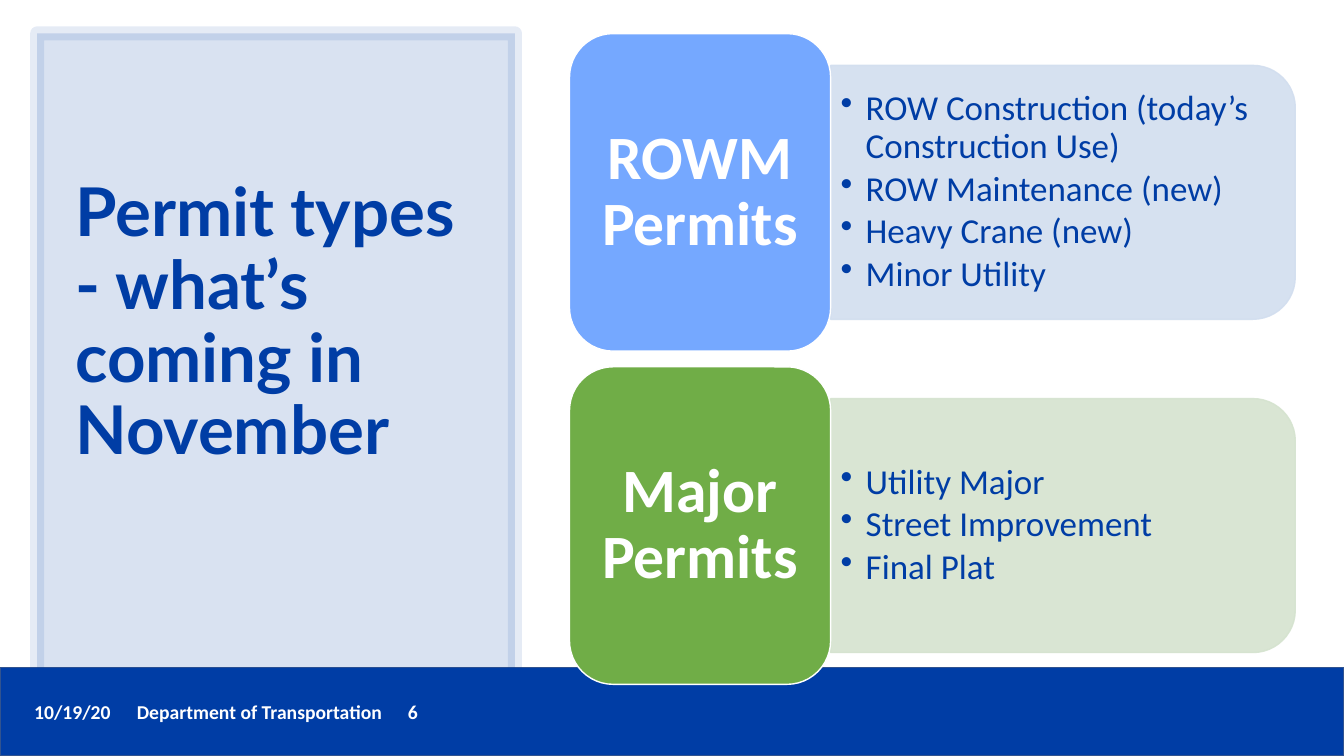
from lxml.etree import SubElement
from pptx import Presentation
from pptx.dml.color import RGBColor
from pptx.enum.shapes import MSO_SHAPE
from pptx.enum.text import MSO_ANCHOR, PP_ALIGN
from pptx.oxml.ns import qn
from pptx.util import Pt

NAVY = RGBColor(0x00, 0x3D, 0xA5)
WHITE = RGBColor(0xFF, 0xFF, 0xFF)
EDGE = RGBColor(0x31, 0x53, 0x8F)
SKY = RGBColor(0x75, 0xA8, 0xFF)
GREEN = RGBColor(0x70, 0xAD, 0x47)
PALE_SKY = RGBColor(0xD2, 0xDE, 0xEF)
PALE_GREEN = RGBColor(0xD5, 0xE3, 0xCF)

deck = Presentation()
deck.slide_width, deck.slide_height = Pt(960), Pt(540)
slide = deck.slides.add_slide(deck.slide_layouts[6])


def draw(kind, x, y, w, h, fill, line, width=1, clear=(100, 100)):
    """Add a shape; clear holds the opacity of fill and line in percent."""
    shape = slide.shapes.add_shape(kind, Pt(x), Pt(y), Pt(w), Pt(h))
    shape.shadow.inherit = False
    shape.line.width = Pt(width)
    for part, color, alpha in zip((shape.fill, shape.line.fill), (fill, line), clear):
        part.solid()
        part.fore_color.rgb = color
        if alpha < 100:
            node = part._xPr.find(qn("a:solidFill"))[0]
            SubElement(node, qn("a:alpha"), val=str(alpha * 1000))
    return shape


def write(text, box=None, shape=None, size=25, font="Calibri", color=NAVY, bold=False,
          align=PP_ALIGN.LEFT, inset=(7.2, 3.6), lead=0.9, after=0, bullet=False, tabs=()):
    """Fill a shape, or a new text box, with one paragraph per line of text."""
    if shape is None:
        shape = slide.shapes.add_textbox(*map(Pt, box))
    frame = shape.text_frame
    frame.word_wrap = True
    frame.vertical_anchor = MSO_ANCHOR.MIDDLE
    frame.margin_left = frame.margin_right = Pt(inset[0])
    frame.margin_top = frame.margin_bottom = Pt(inset[1])
    for i, line in enumerate(text.split("\n")):
        para = frame.add_paragraph() if i else frame.paragraphs[0]
        para.alignment, para.line_spacing = align, lead
        para.space_after = Pt(after)
        props = para._p.get_or_add_pPr()
        if bullet:
            props.set("marL", str(Pt(18)))
            props.set("indent", str(-Pt(18)))
            SubElement(props, qn("a:buChar"), char="•")
        if tabs:
            stops = SubElement(props, qn("a:tabLst"))
            for stop in tabs:
                SubElement(stops, qn("a:tab"), pos=str(Pt(stop)), algn="l")
        run = para.add_run()
        run.text = line
        run.font.name, run.font.size = font, Pt(size)
        run.font.bold, run.font.color.rgb = bold, color


# Footer
draw(MSO_SHAPE.RECTANGLE, 0, 476.6, 960, 63.4, NAVY, EDGE)
write("10/19/20\tDepartment of Transportation\t6", box=(17.3, 496.1, 724, 24.5),
      size=14, color=WHITE, bold=True, lead=1, tabs=(73.4, 267))

# Title panel
draw(MSO_SHAPE.RECTANGLE, 26.6, 23.8, 341.3, 464.4, NAVY, NAVY, 10, (15, 10))
write("Permit types - what’s coming in November", box=(46.8, 50.4, 299.5, 362),
      size=48, font="Lato", bold=True)

# Permit groups: tile on the left, list panel on the right
GROUPS = [
    ("ROWM Permits", SKY, PALE_SKY,
     "ROW Construction (today’s Construction Use)\nROW Maintenance (new)\n"
     "Heavy Crane (new)\nMinor Utility"),
    ("Major Permits", GREEN, PALE_GREEN,
     "Utility Major\nStreet Improvement\nFinal Plat"),
]
LEFT, TOP, STEP = 406.8, 24, 238
TILE_W, TILE_H = 186.5, 226.8
LIST_W, LIST_H = 331.9, 181.4

for i, (name, dark, pale, items) in enumerate(GROUPS):
    top = TOP + i * STEP
    mid = top + TILE_H / 2
    edge = LEFT + TILE_W
    # The panel is turned a quarter, so its width and height trade places
    panel = draw(MSO_SHAPE.ROUND_2_SAME_RECTANGLE, edge + (LIST_W - LIST_H) / 2,
                 mid - LIST_W / 2, LIST_H, LIST_W, pale, pale, 1, (90, 90))
    panel.rotation = 90
    write(items, box=(edge, mid - 81.7, 323.3, 163.4), after=3.5, bullet=True)
    tile = draw(MSO_SHAPE.ROUNDED_RECTANGLE, LEFT, top, TILE_W, TILE_H, dark, WHITE)
    write(name, shape=tile, size=44, color=WHITE, bold=True,
          align=PP_ALIGN.CENTER, inset=(13, 6.5))

deck.save("out.pptx")
